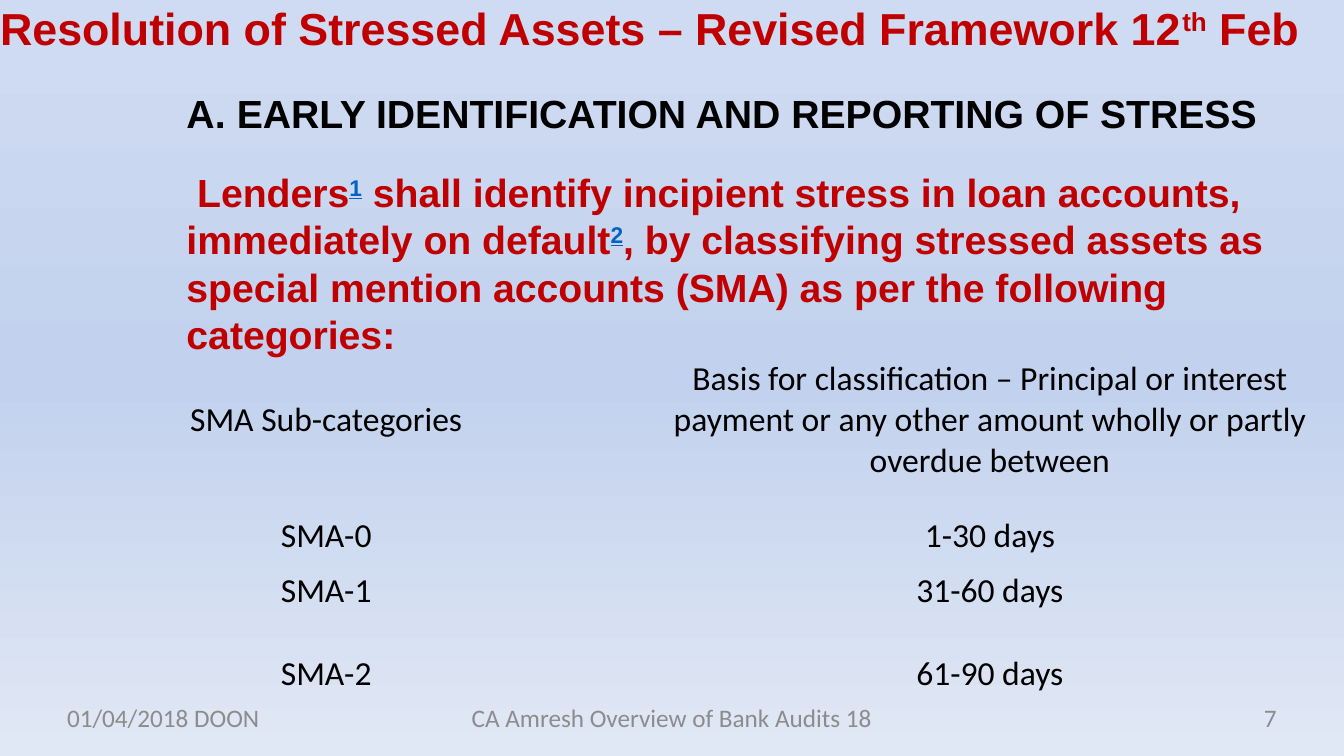
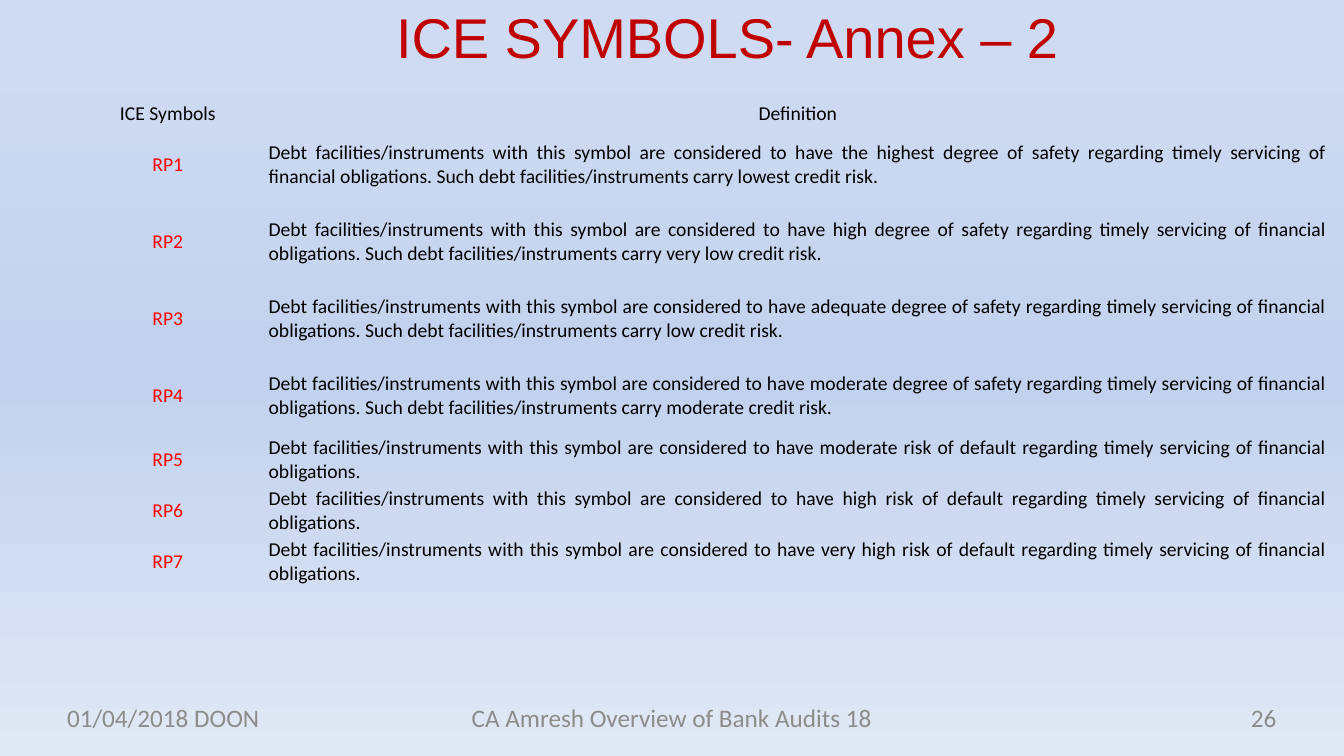
import copy

import pptx
import pptx.dml.color
import pptx.enum.text
import pptx.oxml
import pptx.oxml.ns
import pptx.util

Cm = pptx.util.Cm
Pt = pptx.util.Pt
RGBColor = pptx.dml.color.RGBColor
ALIGN = pptx.enum.text.PP_ALIGN
ANCHOR = pptx.enum.text.MSO_ANCHOR

BLACK = RGBColor(0x00, 0x00, 0x00)
DARK_RED = RGBColor(0xC0, 0x00, 0x00)
RED = RGBColor(0xFF, 0x00, 0x00)
GREY = RGBColor(0x8C, 0x8C, 0x8C)
LINK_BLUE = RGBColor(0x04, 0x62, 0xC1)
BACKGROUND_STOPS = [
    (0.05, RGBColor(0xCE, 0xDB, 0xF2)),
    (0.5, RGBColor(0xC2, 0xD1, 0xED)),
    (1.0, RGBColor(0xE1, 0xE8, 0xF5)),
]

HEADING_FONT = "Arial"
BODY_FONT = "Calibri"
NO_GRID_STYLE = "{2D5ABB26-0587-4C30-8999-92F81FD0307C}"
TITLE_ONLY_LAYOUT = 5

FOOTER_DATE = "01/04/2018 DOON"
FOOTER_TEXT = "CA Amresh Overview of Bank Audits 18"

SUPERSCRIPT = {"superscript": True}
NOTE_MARK = {"superscript": True, "underline": True, "color": LINK_BLUE}

STRESS_TITLE = [
    ("Resolution of Stressed Assets – Revised Framework 12", {}),
    ("th", SUPERSCRIPT),
    (" Feb", {}),
]
STRESS_HEADING = "EARLY IDENTIFICATION AND REPORTING OF STRESS"
STRESS_BODY = [
    ("Lenders", {}),
    ("1", NOTE_MARK),
    (" shall identify incipient stress in loan accounts, immediately on default", {}),
    ("2", NOTE_MARK),
    (", by classifying stressed assets as special mention accounts (SMA) "
     "as per the following categories:", {}),
]
SMA_ROWS = [
    ("SMA Sub-categories", "Basis for classification – Principal or interest payment "
     "or any other amount wholly or partly overdue between"),
    ("SMA-0", "1-30 days"),
    ("SMA-1", "31-60 days"),
    ("SMA-2", "61-90 days"),
]

ICE_TITLE = "ICE SYMBOLS- Annex – 2"
ICE_HEADER = ("ICE Symbols", "Definition")
ICE_DEFINITION = (
    "Debt facilities/instruments with this symbol are considered to have {} "
    "regarding timely servicing of financial obligations."
)
ICE_RISK = " Such debt facilities/instruments carry {} credit risk."
ICE_GRADES = [
    ("the highest degree of safety", "lowest"),
    ("high degree of safety", "very low"),
    ("adequate degree of safety", "low"),
    ("moderate degree of safety", "moderate"),
    ("moderate risk of default", None),
    ("high risk of default", None),
    ("very high risk of default", None),
]


def write_text(paragraph, text, size=18, font=BODY_FONT, color=BLACK, bold=False,
               align=ALIGN.LEFT):
    paragraph.alignment = align
    runs = [(text, {})] if isinstance(text, str) else text
    for run_text, changes in runs:
        run = paragraph.add_run()
        run.text = run_text
        run.font.size = Pt(size)
        run.font.name = font
        run.font.bold = bold
        run.font.underline = changes.get("underline", False)
        run.font.color.rgb = changes.get("color", color)
        if changes.get("superscript"):
            run.font._element.set("baseline", "30000")


def remove_margins(frame):
    frame.margin_left = frame.margin_right = 0
    frame.margin_top = frame.margin_bottom = 0
    frame.vertical_anchor = ANCHOR.MIDDLE


def set_indent(paragraph, left, first):
    properties = paragraph._p.get_or_add_pPr()
    properties.set("marL", str(Cm(left)))
    properties.set("indent", str(Cm(first)))
    return properties


def paint_background(master):
    fill = master.background.fill
    fill.gradient()
    fill.gradient_angle = 270
    first_stop = fill.gradient_stops[0]._gs
    first_stop.addnext(copy.deepcopy(first_stop))
    for stop, (position, color) in zip(fill.gradient_stops, BACKGROUND_STOPS):
        stop.position = position
        stop.color.rgb = color


def add_text_box(slide, left, top, width, height):
    shape = slide.shapes.add_textbox(Cm(left), Cm(top), Cm(width), Cm(height))
    shape.text_frame.word_wrap = True
    return shape.text_frame


def add_slide(presentation, title, position, number, **title_format):
    slide = presentation.slides.add_slide(presentation.slide_layouts[TITLE_ONLY_LAYOUT])
    shape = slide.shapes.title
    shape.left, shape.top, shape.width, shape.height = map(Cm, position)
    frame = shape.text_frame
    frame.auto_size = pptx.enum.text.MSO_AUTO_SIZE.NONE
    remove_margins(frame)
    write_text(frame.paragraphs[0], title, font=HEADING_FONT, color=DARK_RED, **title_format)

    footers = [
        (FOOTER_DATE, 1.69, 7.79, ALIGN.LEFT),
        (FOOTER_TEXT, 11.51, 10.84, ALIGN.CENTER),
        (str(number), 24.38, 7.79, ALIGN.RIGHT),
    ]
    for text, left, width, align in footers:
        frame = add_text_box(slide, left, 17.7, width, 0.97)
        remove_margins(frame)
        frame.vertical_anchor = ANCHOR.TOP
        write_text(frame.paragraphs[0], text, color=GREY, align=align)
    return slide


def add_plain_table(slide, rows, left, top, widths, heights, size,
                    symbol_color=BLACK, text_align=ALIGN.CENTER):
    table = slide.shapes.add_table(
        len(rows), len(widths), Cm(left), Cm(top), Cm(sum(widths)), Cm(sum(heights))
    ).table
    table.first_row = table.horz_banding = False
    table._tbl.tblPr.find(pptx.oxml.ns.qn("a:tableStyleId")).text = NO_GRID_STYLE
    for column, width in zip(table.columns, widths):
        column.width = Cm(width)
    for row, height in zip(table.rows, heights):
        row.height = Cm(height)
    for row_index, values in enumerate(rows):
        for column_index, value in enumerate(values):
            cell = table.cell(row_index, column_index)
            cell.fill.background()
            remove_margins(cell)
            is_header = row_index == 0
            is_symbol = column_index == 0
            write_text(
                cell.text_frame.paragraphs[0], value, size=size,
                color=symbol_color if is_symbol and not is_header else BLACK,
                align=ALIGN.CENTER if is_header or is_symbol else text_align,
            )


def build_stress_slide(presentation):
    slide = add_slide(presentation, STRESS_TITLE, (0, 0, 33.87, 1.37), 7, size=32, bold=True)
    add_plain_table(slide, SMA_ROWS, 0.03, 8.2, (16.38, 17.07), (4.78, 1.07, 1.7, 2.46), 24)

    frame = add_text_box(slide, 4.45, 2.13, 28.58, 7)
    heading = frame.paragraphs[0]
    write_text(heading, STRESS_HEADING, size=28, font=HEADING_FONT, bold=True)
    numbering = pptx.oxml.parse_xml(
        f'<a:buAutoNum {pptx.oxml.ns.nsdecls("a")} type="alphaUcPeriod"/>'
    )
    set_indent(heading, 1.27, -1.27).append(numbering)
    body = frame.add_paragraph()
    write_text(body, STRESS_BODY, size=28, font=HEADING_FONT, color=DARK_RED, bold=True)
    set_indent(body, 0, 0.27)
    body.space_before = Pt(23)


def build_ice_slide(presentation):
    slide = add_slide(presentation, ICE_TITLE, (9.17, 0, 17.5, 1.8), 26,
                      size=40, align=ALIGN.RIGHT)
    rows, heights = [ICE_HEADER], [0.64]
    for number, (degree, risk) in enumerate(ICE_GRADES, start=1):
        definition = ICE_DEFINITION.format(degree)
        if risk:
            definition += ICE_RISK.format(risk)
        rows.append((f"RP{number}", definition))
        heights.append(1.94 if risk else 1.29)
    add_plain_table(slide, rows, 1.69, 2.54, (5.08, 26.67), heights, 14,
                    symbol_color=RED, text_align=ALIGN.JUSTIFY)


def main():
    presentation = pptx.Presentation()
    presentation.slide_width = Cm(33.87)
    presentation.slide_height = Cm(19.05)
    paint_background(presentation.slide_master)
    build_stress_slide(presentation)
    build_ice_slide(presentation)
    presentation.save("out.pptx")


if __name__ == "__main__":
    main()
